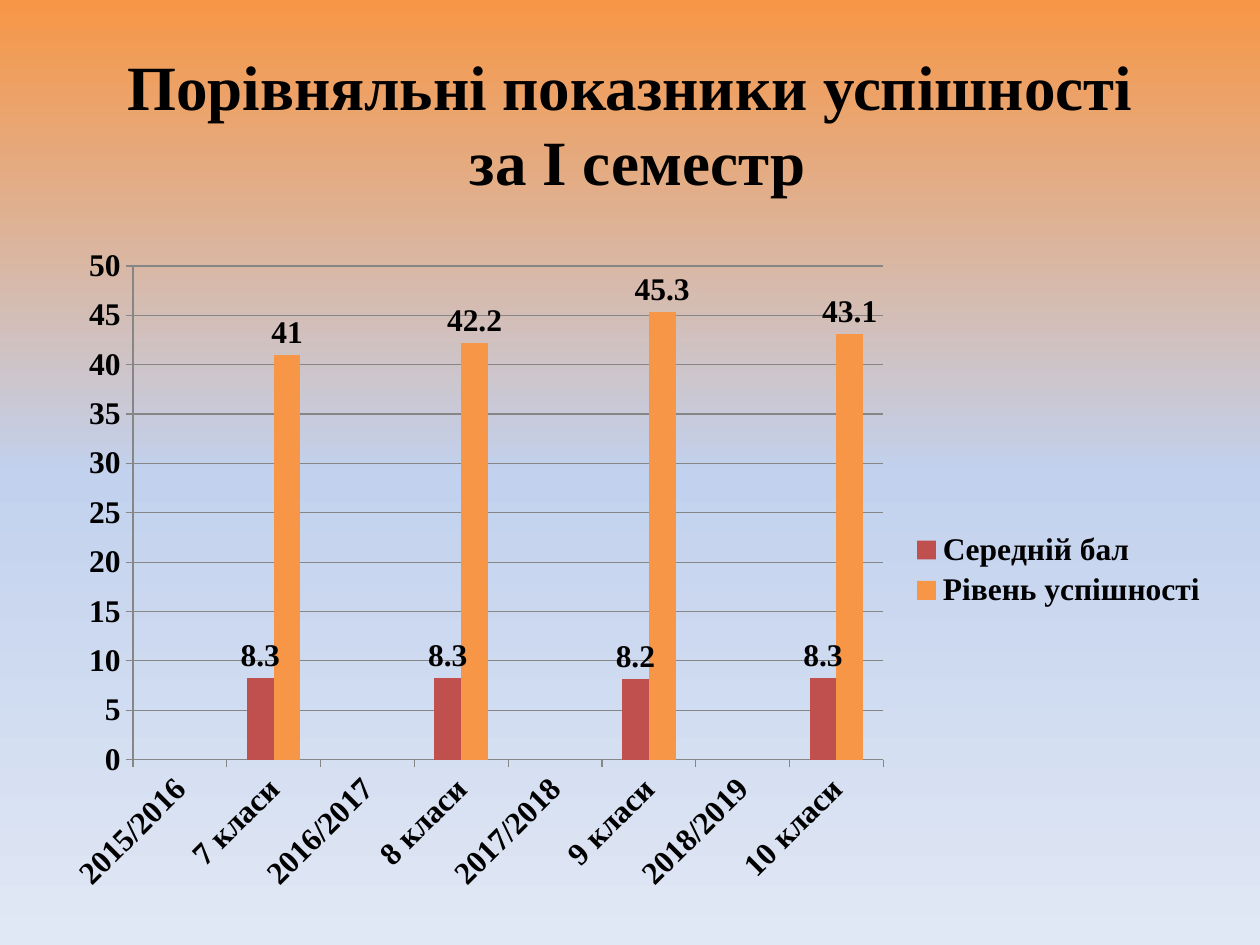
from copy import deepcopy

from pptx import Presentation
from pptx.chart.data import CategoryChartData
from pptx.dml.color import RGBColor
from pptx.enum.chart import XL_CHART_TYPE, XL_LABEL_POSITION, XL_LEGEND_POSITION, XL_TICK_MARK
from pptx.enum.text import MSO_ANCHOR, PP_ALIGN
from pptx.util import Cm, Pt

COLUMNS = XL_CHART_TYPE.COLUMN_CLUSTERED
OUT_END = XL_LABEL_POSITION.OUTSIDE_END
RIGHT = XL_LEGEND_POSITION.RIGHT
TICK_OUT = XL_TICK_MARK.OUTSIDE
MIDDLE = MSO_ANCHOR.MIDDLE
CENTER = PP_ALIGN.CENTER

FACE = "Times New Roman"
BLACK = "000000"
GREY = "868686"
SKY = [(0, "F79646"), (0.5, "C2D1ED"), (1, "E1E8F5")]
TITLE = "Порівняльні показники успішності\n за І семестр"
# School year, class, average mark, success level
RESULTS = [
    ("2015/2016", "7 класи", 8.3, 41),
    ("2016/2017", "8 класи", 8.3, 42.2),
    ("2017/2018", "9 класи", 8.2, 45.3),
    ("2018/2019", "10 класи", 8.3, 43.1),
]
SERIES = [("Середній бал", "C0504D"), ("Рівень успішності", "F79646")]


def color(code):
    return RGBColor.from_string(code)


def style(font, size):
    font.name = FACE
    font.size = Pt(size)
    font.bold = True
    font.color.rgb = color(BLACK)


def paint_sky(slide):
    """Fill the background with a three-stop vertical gradient."""
    fill = slide.background.fill
    fill.gradient()
    fill.gradient_angle = 270
    stops = fill.gradient_stops
    first = stops[0]._gs
    first.addnext(deepcopy(first))
    for stop, (place, code) in zip(fill.gradient_stops, SKY):
        stop.position = place
        stop.color.rgb = color(code)


def add_title(slide):
    box = slide.shapes.add_textbox(Cm(1.27), Cm(0), Cm(22.86), Cm(4.95))
    frame = box.text_frame
    frame.word_wrap = True
    frame.vertical_anchor = MIDDLE
    line = frame.paragraphs[0]
    line.text = TITLE
    line.alignment = CENTER
    for run in line.runs:
        style(run.font, 36)


def chart_data():
    """Give each year an empty slot, followed by its class with values."""
    data = CategoryChartData()
    data.categories = [name for row in RESULTS for name in row[:2]]
    for index, (name, _) in enumerate(SERIES, start=2):
        data.add_series(name, [val for row in RESULTS for val in (None, row[index])])
    return data


def style_axis(axis):
    axis.major_tick_mark = TICK_OUT
    axis.minor_tick_mark = XL_TICK_MARK.NONE
    axis.format.line.color.rgb = color(GREY)
    style(axis.tick_labels.font, 18)


def style_series(series, code):
    series.format.fill.solid()
    series.format.fill.fore_color.rgb = color(code)
    series.invert_if_negative = False
    labels = series.data_labels
    labels.show_value = True
    labels.position = OUT_END
    style(labels.font, 18)


def add_results(slide):
    frame = slide.shapes.add_chart(
        COLUMNS, Cm(0.99), Cm(4.75), Cm(23.62), Cm(13.49), chart_data())
    chart = frame.chart
    chart.has_title = False
    style(chart.font, 18)
    for axis in (chart.category_axis, chart.value_axis):
        style_axis(axis)
    scale = chart.value_axis
    scale.minimum_scale, scale.maximum_scale, scale.major_unit = 0, 50, 5
    scale.has_major_gridlines = True
    scale.major_gridlines.format.line.color.rgb = color(GREY)

    plot = chart.plots[0]
    plot.gap_width = 150
    plot.vary_by_categories = False
    for series, (_, code) in zip(plot.series, SERIES):
        style_series(series, code)

    chart.has_legend = True
    chart.legend.position = RIGHT
    chart.legend.include_in_layout = False
    style(chart.legend.font, 18)


def main():
    deck = Presentation()
    deck.slide_width, deck.slide_height = Cm(25.4), Cm(19.05)
    slide = deck.slides.add_slide(deck.slide_layouts[6])
    paint_sky(slide)
    add_title(slide)
    add_results(slide)
    deck.save("out.pptx")


if __name__ == "__main__":
    main()
